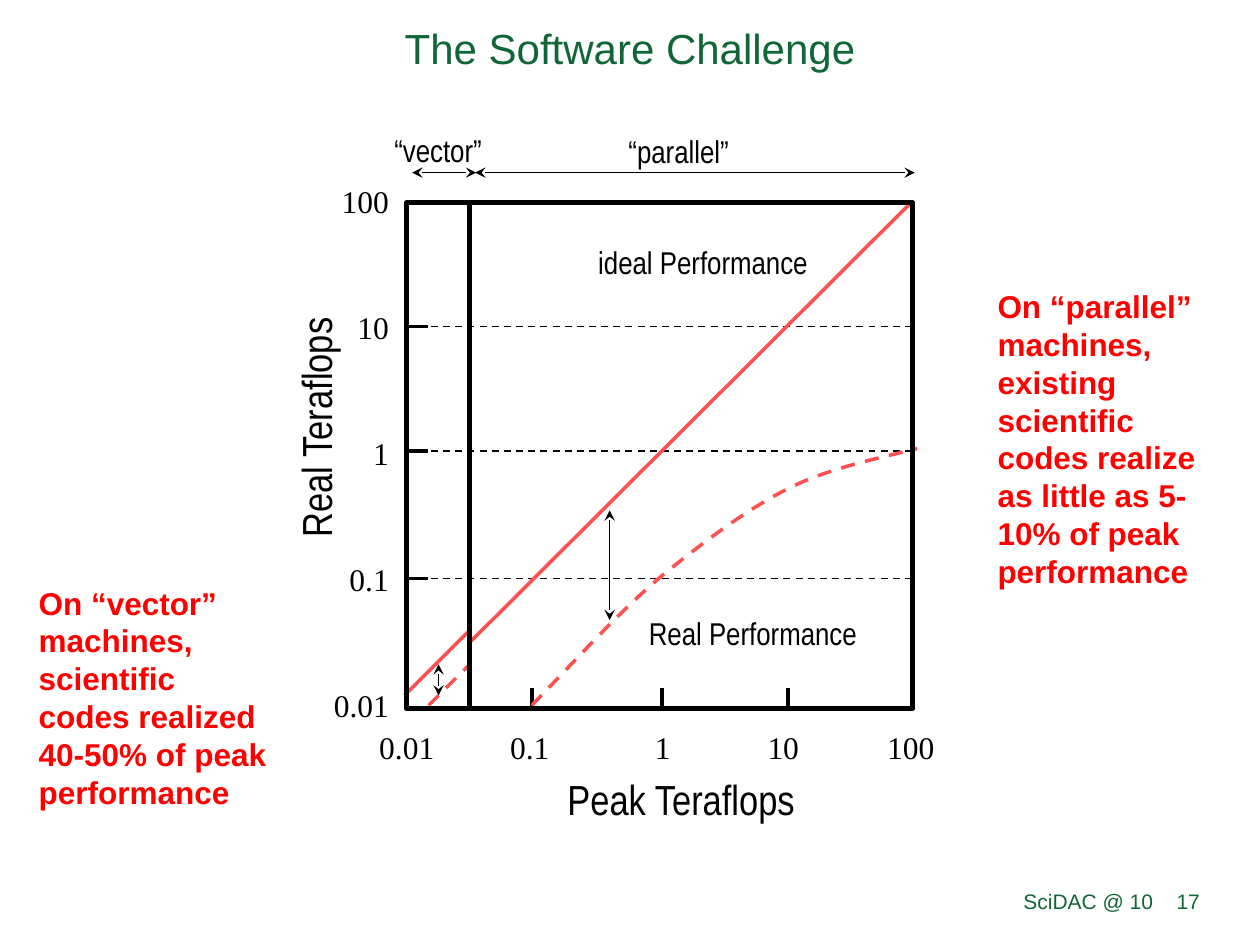
from dataclasses import dataclass

from lxml.etree import SubElement
from pptx import Presentation
from pptx.dml.color import RGBColor
from pptx.enum.dml import MSO_LINE
from pptx.enum.shapes import MSO_CONNECTOR, MSO_SHAPE
from pptx.enum.text import MSO_ANCHOR as Anchor, MSO_AUTO_SIZE as Fit, PP_ALIGN as Align
from pptx.oxml.ns import qn
from pptx.util import Cm, Pt


@dataclass(frozen=True)
class Theme:
    ink: str = "000000"
    brand: str = "106636"
    note: str = "FF0000"
    trend: str = "FF5050"
    sans: str = "Arial"
    narrow: str = "Arial Narrow"
    serif: str = "Times New Roman"
    heading: int = 24
    body: int = 18
    footer: int = 12
    hairline: float = 0.75
    grid: float = 1
    stroke: float = 2
    frame: float = 3


class SlideBuilder:
    def __init__(self, slide, theme):
        self.shapes = slide.shapes
        self.theme = theme

    def text(self, content, box, font, size, color, align=Align.LEFT, bold=False,
             anchor=Anchor.MIDDLE, wrap=True, grow=True, inset=True, rotation=0):
        label = self.shapes.add_textbox(*map(Cm, box))
        label.rotation = rotation
        frame = label.text_frame
        frame.word_wrap = wrap
        frame.auto_size = Fit.SHAPE_TO_FIT_TEXT if grow else Fit.NONE
        frame.vertical_anchor = anchor
        if not inset:
            frame.margin_left = frame.margin_right = 0
            frame.margin_top = frame.margin_bottom = 0
        paragraph = frame.paragraphs[0]
        paragraph.alignment = align
        run = paragraph.add_run()
        run.text = content
        run.font.name = font
        run.font.size = Pt(size)
        run.font.bold = bold
        run.font.color.rgb = RGBColor.from_string(color)

    def tick_label(self, content, top, right=None, center=None):
        """Fit the box to the label: a digit is half an em wide, a point a quarter."""
        em = Pt(self.theme.body).cm
        width = sum(em / 4 if mark == "." else em / 2 for mark in content)
        left = right - width if center is None else center - width / 2
        self.text(content, (left, top, width, 0.76), self.theme.serif, self.theme.body,
                  self.theme.ink, Align.LEFT if right is None else Align.RIGHT,
                  anchor=Anchor.TOP, wrap=False, inset=False)

    def caption(self, content, box):
        self.text(content, box, self.theme.narrow, self.theme.body, self.theme.ink, wrap=False)

    def axis_title(self, content, box, rotation=0):
        self.text(content, box, self.theme.narrow, self.theme.heading, self.theme.ink,
                  Align.CENTER, anchor=Anchor.TOP, rotation=rotation)

    def note(self, content, box):
        self.text(content, box, self.theme.sans, self.theme.body, self.theme.note, bold=True)

    def footer(self, content, box):
        self.text(content, box, self.theme.sans, self.theme.footer, self.theme.brand,
                  Align.RIGHT, grow=False)

    def stroke(self, line, color, width, dashed=False):
        line.color.rgb = RGBColor.from_string(color)
        line.width = Pt(width)
        if dashed:
            line.dash_style = MSO_LINE.DASH

    def line(self, start, end, color, width, dashed=False):
        connector = self.shapes.add_connector(MSO_CONNECTOR.STRAIGHT, *map(Cm, start + end))
        self.stroke(connector.line, color, width, dashed)
        SubElement(connector._element.spPr, qn("a:effectLst"))
        return connector

    def double_arrow(self, start, end):
        arrow = self.line(start, end, self.theme.ink, self.theme.hairline)
        outline = arrow.line._get_or_add_ln()
        for tip in ("a:headEnd", "a:tailEnd"):
            SubElement(outline, qn(tip), type="stealth")

    def curve(self, points, color, width):
        """Draw a dashed chain of cubic Bézier arcs through every third point."""
        steps = 12
        trace = []
        for first in range(0, len(points) - 1, 3):
            arc = points[first:first + 4]
            for step in range(1, steps + 1):
                t = step / steps
                weights = ((1 - t) ** 3, 3 * t * (1 - t) ** 2, 3 * t * t * (1 - t), t ** 3)
                trace.append(tuple(Cm(sum(w * p[axis] for w, p in zip(weights, arc)))
                                   for axis in (0, 1)))
        outline = self.shapes.build_freeform(*map(Cm, points[0]))
        outline.add_line_segments(trace, close=False)
        self.finish_outline(outline.convert_to_shape(), color, width, dashed=True)

    def frame(self, box, color, width):
        border = self.shapes.add_shape(MSO_SHAPE.RECTANGLE, *map(Cm, box))
        self.finish_outline(border, color, width)

    def finish_outline(self, shape, color, width, dashed=False):
        shape.shadow.inherit = False
        shape.fill.background()
        self.stroke(shape.line, color, width, dashed)


def draw_axes(builder, left, top, side):
    theme = builder.theme
    bottom = top + side
    tick = 0.43
    scale = ("0.01", "0.1", "1", "10", "100")
    label_centers = (8.2, 10.68, 13.36, 15.79, 18.36)
    for row, (value, center) in enumerate(zip(scale, label_centers)):
        builder.tick_label(value, 13.82 - 2.54 * row, right=7.84)
        builder.tick_label(value, 14.68, center=center)
    for y in (6.58, 9.09, 11.66):
        builder.line((left, y), (left + side, y), theme.ink, theme.grid, dashed=True)
        builder.line((left, y), (left + tick, y), theme.ink, theme.stroke)
    for x in (10.72, 13.34, 15.88):
        builder.line((x, bottom), (x, bottom - tick), theme.ink, theme.stroke)
    builder.axis_title("Real Teraflops", (2.74, 7.98, 7.24, 1.27), rotation=270)
    builder.axis_title("Peak Teraflops", (10.11, 15.47, 7.24, 1.27))


def draw_performance(builder, era_split):
    theme = builder.theme
    builder.line((8.15, 14.02), (era_split, 12.7), theme.trend, theme.stroke)
    builder.line((era_split, 12.95), (18.39, 4.06), theme.trend, theme.stroke)
    builder.line((8.64, 14.22), (era_split, 13.39), theme.trend, theme.stroke, dashed=True)
    real_parallel = [(10.72, 14.22), (11.58, 13.34), (12.42, 12.4), (13.28, 11.66),
                     (14.15, 10.95), (15.06, 10.26), (15.93, 9.83),
                     (16.79, 9.4), (17.96, 9.19), (18.49, 9.04)]
    builder.curve(real_parallel, theme.trend, theme.stroke)


def main():
    theme = Theme()
    deck = Presentation()
    deck.slide_width, deck.slide_height = Cm(25.4), Cm(19.05)
    builder = SlideBuilder(deck.slides.add_slide(deck.slide_layouts[6]), theme)

    builder.text("The Software Challenge", (2.21, -0.2, 20.98, 2.34), theme.sans,
                 theme.heading, theme.brand, Align.CENTER, grow=False)

    left, top, side, era_split = 8.2, 4.09, 10.2, 9.47
    draw_axes(builder, left, top, side)
    draw_performance(builder, era_split)
    builder.frame((left, top, side, side), theme.ink, theme.frame)
    builder.line((era_split, top + side), (era_split, top), theme.ink, theme.frame)

    eras_y = 3.48
    for start, end in (((8.31, eras_y), (9.6, eras_y)), ((9.58, eras_y), (18.44, eras_y)),
                       ((8.84, 13.39), (8.84, 14.02)), ((12.29, 10.29), (12.29, 12.5))):
        builder.double_arrow(start, end)

    builder.caption("“vector”", (7.7, 2.51, 2.59, 1.02))
    builder.caption("“parallel”", (12.42, 2.54, 2.87, 1.02))
    builder.caption("ideal Performance", (11.81, 4.78, 5.03, 1.02))
    builder.caption("Real Performance", (12.83, 12.24, 4.95, 1.02))

    builder.note("On “vector” machines, scientific codes realized 40-50% of peak performance",
                 (0.53, 11.61, 5.13, 4.88))
    builder.note("On “parallel” machines, existing scientific codes realize as little as "
                 "5-10% of peak performance", (19.86, 5.64, 4.85, 6.4))

    builder.footer("SciDAC @ 10", (8.69, 17.65, 14.81, 1.02))
    builder.footer("17", (23.37, 17.65, 1.07, 1.02))
    deck.save("out.pptx")


if __name__ == "__main__":
    main()
